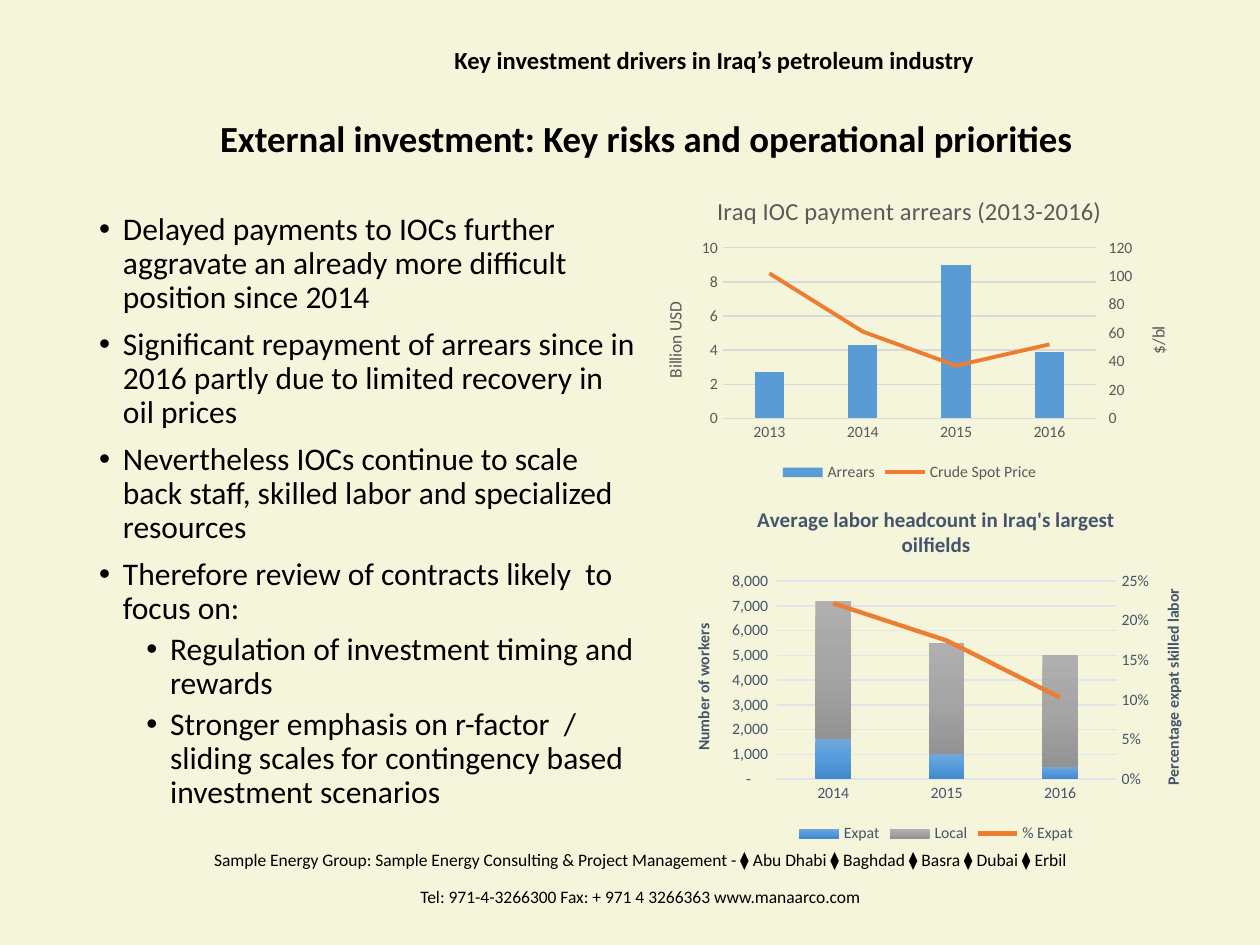
from copy import deepcopy

from lxml.etree import SubElement
from pptx import Presentation
from pptx.chart.axis import ValueAxis
from pptx.chart.data import CategoryChartData
from pptx.dml.color import RGBColor
from pptx.enum.chart import XL_CHART_TYPE, XL_LEGEND_POSITION, XL_MARKER_STYLE, XL_TICK_MARK
from pptx.enum.text import MSO_ANCHOR, PP_ALIGN
from pptx.oxml import parse_xml
from pptx.oxml.ns import nsdecls, qn
from pptx.util import Cm, Pt

FONT = "Calibri"
ORANGE = "ED7D31"
BULLETS = [
    (0, "Delayed payments to IOCs further aggravate an already more difficult position since 2014"),
    (0, "Significant repayment of arrears since in 2016 partly due to limited recovery in oil prices"),
    (0, "Nevertheless IOCs continue to scale back staff, skilled labor and specialized resources"),
    (0, "Therefore review of contracts likely  to focus on:"),
    (1, "Regulation of investment timing and rewards"),
    (1, "Stronger emphasis on r-factor  / sliding scales for contingency based investment scenarios"),
]
FOOTER = [
    "Sample Energy Group: Sample Energy Consulting & Project Management - "
    "⧫ Abu Dhabi ⧫ Baghdad ⧫ Basra ⧫ Dubai ⧫ Erbil",
    "Tel: 971-4-3266300 Fax: + 971 4 3266363 www.manaarco.com",
]


def rgb(value):
    return RGBColor.from_string(value)


def set_font(font, size, color="000000", bold=False):
    font.name = FONT
    font.size = Pt(size)
    font.bold = bold
    font.color.rgb = rgb(color)


def add_box(s, left, top, width, height):
    tf = s.shapes.add_textbox(Cm(left), Cm(top), Cm(width), Cm(height)).text_frame
    tf.word_wrap = True
    return tf


def add_paragraph(tf, index, text, size, before=0, bold=False):
    p = tf.add_paragraph() if index else tf.paragraphs[0]
    p.line_spacing = 0.9
    p.space_before = Pt(before if index else 0)
    r = p.add_run()
    r.text = text
    set_font(r.font, size, bold=bold)
    return p


def add_centered(s, box, lines, size, before=0, bold=False):
    tf = add_box(s, *box)
    for i, line in enumerate(lines):
        add_paragraph(tf, i, line, size, before, bold).alignment = PP_ALIGN.CENTER
    return tf


def add_bullets(s, box, items):
    tf = add_box(s, *box)
    for i, (level, text) in enumerate(items):
        p = add_paragraph(tf, i, text, 18, 3.8 if level else 7.5)
        p.level = level
        pPr = p._p.get_or_add_pPr()
        pPr.set("marL", str(Cm(0.48 + 0.95 * level)))
        pPr.set("indent", str(-Cm(0.48)))
        SubElement(pPr, qn("a:buFont")).set("typeface", "Arial")
        SubElement(pPr, qn("a:buChar")).set("char", "•")


def write_title(tf, text, size, color, bold):
    r = tf.paragraphs[0].add_run()
    r.text = text
    set_font(r.font, size, color, bold)


def style_axis(axis, color):
    axis.major_tick_mark = axis.minor_tick_mark = XL_TICK_MARK.NONE
    set_font(axis.tick_labels.font, 9, color)


def style_value_axis(axis, look, title, top, step, number_format):
    style_axis(axis, look["text"])
    axis.minimum_scale, axis.maximum_scale, axis.major_unit = 0, top, step
    axis.tick_labels.number_format = number_format
    axis.tick_labels.number_format_is_linked = False
    axis.format.line.fill.background()
    tf = axis.axis_title.text_frame
    write_title(tf, title, look["axis_size"], look["text"], look["bold"])
    tf._txBody.bodyPr.set("rot", "-5400000")
    tf._txBody.bodyPr.set("vert", "horz")


def move_last_series_to_line(chart):
    plot_area = chart._chartSpace.chart.plotArea
    bar = plot_area.find(qn("c:barChart"))
    ser = bar.findall(qn("c:ser"))[-1]
    for invert in ser.findall(qn("c:invertIfNegative")):
        ser.remove(invert)
    line = parse_xml(
        f'<c:lineChart {nsdecls("c")}><c:grouping val="standard"/><c:varyColors val="0"/>'
        '<c:marker val="1"/><c:axId val="5001"/><c:axId val="5002"/></c:lineChart>'
    )
    line.insert(2, ser)
    bar.addnext(line)
    cat, val = plot_area.find(qn("c:catAx")), plot_area.find(qn("c:valAx"))
    right, hidden = deepcopy(val), deepcopy(cat)
    for axis, own, other in ((right, "5002", "5001"), (hidden, "5001", "5002")):
        axis.find(qn("c:axId")).set("val", own)
        axis.find(qn("c:crossAx")).set("val", other)
    right.find(qn("c:crosses")).set("val", "max")
    right.find(qn("c:axPos")).set("val", "r")
    hidden.find(qn("c:delete")).set("val", "1")
    val.addnext(right)
    right.addnext(hidden)
    return ValueAxis(val), ValueAxis(right)


def set_plot_area(chart, x, y, w, h):
    plot_area = chart._chartSpace.chart.plotArea
    for old in plot_area.findall(qn("c:layout")):
        plot_area.remove(old)
    sizes = "".join(f'<c:{k} val="{v}"/>' for k, v in zip("xywh", (x, y, w, h)))
    plot_area.insert(0, parse_xml(
        f'<c:layout {nsdecls("c")}><c:manualLayout><c:layoutTarget val="inner"/>'
        f'<c:xMode val="edge"/><c:yMode val="edge"/>{sizes}</c:manualLayout></c:layout>'
    ))


def fill_series(series, colors):
    fill = series.format.fill
    if len(colors) == 1:
        fill.solid()
        fill.fore_color.rgb = rgb(colors[0])
        return
    fill.gradient()
    fill.gradient_angle = 270
    stops = series._element.xpath(".//a:gsLst")[0]
    stops.insert(1, deepcopy(stops[0]))
    for stop, position, color in zip(fill.gradient_stops, (0, 0.5, 1), colors):
        stop.position = position
        stop.color.rgb = rgb(color)


def add_combo_chart(s, box, kind, title, cats, series, fills, look, left, right, plot_box):
    data = CategoryChartData()
    data.categories = cats
    for name, values in series:
        data.add_series(name, values)
    chart = s.shapes.add_chart(kind, *map(Cm, box), data).chart
    set_font(chart.font, 10)
    chart.has_title = True
    write_title(chart.chart_title.text_frame, title, look["title_size"], look["text"], look["bold"])
    chart.chart_title.include_in_layout = False
    chart.has_legend = True
    chart.legend.position = XL_LEGEND_POSITION.BOTTOM
    chart.legend.include_in_layout = False
    set_font(chart.legend.font, 9, look["text"])

    left_axis, right_axis = move_last_series_to_line(chart)
    style_value_axis(left_axis, look, *left)
    style_value_axis(right_axis, look, *right)
    right_axis.major_tick_mark = look["right_tick"]
    right_axis.has_major_gridlines = False
    style_axis(chart.category_axis, look["text"])
    for line in (chart.category_axis.format.line, left_axis.major_gridlines.format.line):
        line.color.rgb = rgb(look["grid"])
        line.width = Pt(0.75)

    bars, trend = chart.plots
    bars.gap_width, bars.overlap = 219, look["overlap"]
    bars.vary_by_categories = False
    for bar, colors in zip(bars.series, fills):
        fill_series(bar, colors)
    trend_line = trend.series[0]
    trend_line.smooth = False
    trend_line.marker.style = XL_MARKER_STYLE.NONE
    trend_line.format.line.color.rgb = rgb(ORANGE)
    trend_line.format.line.width = Pt(look["line"])
    set_plot_area(chart, *plot_box)


def main():
    prs = Presentation()
    prs.slide_width, prs.slide_height = Cm(25.4), Cm(19.05)
    s = prs.slides.add_slide(prs.slide_layouts[6])
    s.background.fill.solid()
    s.background.fill.fore_color.rgb = rgb("F5F5DC")

    add_centered(s, (1.96, 17.04, 21.89, 1.73), FOOTER, 10, before=10)
    title = add_centered(s, (1.83, 2.11, 22.4, 1.45),
                         ["External investment: Key risks and operational priorities"], 21, bold=True)
    title.vertical_anchor = MSO_ANCHOR.MIDDLE
    add_bullets(s, (1.75, 4.17, 11.43, 11.3), BULLETS)
    add_centered(s, (5.13, 0.84, 18.54, 1.14),
                 ["Key investment drivers in Iraq’s petroleum industry"], 14, bold=True)

    add_combo_chart(
        s, (13.51, 9.83, 10.72, 7.26), XL_CHART_TYPE.COLUMN_STACKED,
        "Average labor headcount in Iraq's largest oilfields", ["2014", "2015", "2016"],
        [("Expat", (1600, 1000, 500)), ("Local", (5600, 4500, 4500)), ("% Expat", (0.222, 0.175, 0.103))],
        [("71A6DB", "559BDB", "448ACA"), ("AFAFAF", "A5A5A5", "939393")],
        dict(text="44546A", grid="E0E5EB", title_size=12, axis_size=9, bold=True, overlap=100, line=2.5,
             right_tick=XL_TICK_MARK.NONE),
        ("Number of workers", 8000, 1000, '_(* #,##0_);_(* \\(#,##0\\);_(* "-"??_);_(@_)'),
        ("Percentage expat skilled labor", 0.25, 0.05, "0%"),
        (0.2, 0.26, 0.64, 0.55))
    add_combo_chart(
        s, (12.8, 3.56, 11.07, 6.25), XL_CHART_TYPE.COLUMN_CLUSTERED,
        "Iraq IOC payment arrears (2013-2016)", ["2013", "2014", "2015", "2016"],
        [("Arrears", (2.7, 4.3, 9, 3.9)), ("Crude Spot Price", (102, 61, 37, 52))],
        [("5B9BD5",)],
        dict(text="595959", grid="D9D9D9", title_size=14, axis_size=10, bold=False, overlap=-27, line=2.25,
             right_tick=XL_TICK_MARK.OUTSIDE),
        ("Billion USD", 10, 2, "General"),
        ("$/bl", 120, 20, "General"),
        (0.16, 0.23, 0.68, 0.55))
    prs.save("out.pptx")


if __name__ == "__main__":
    main()
